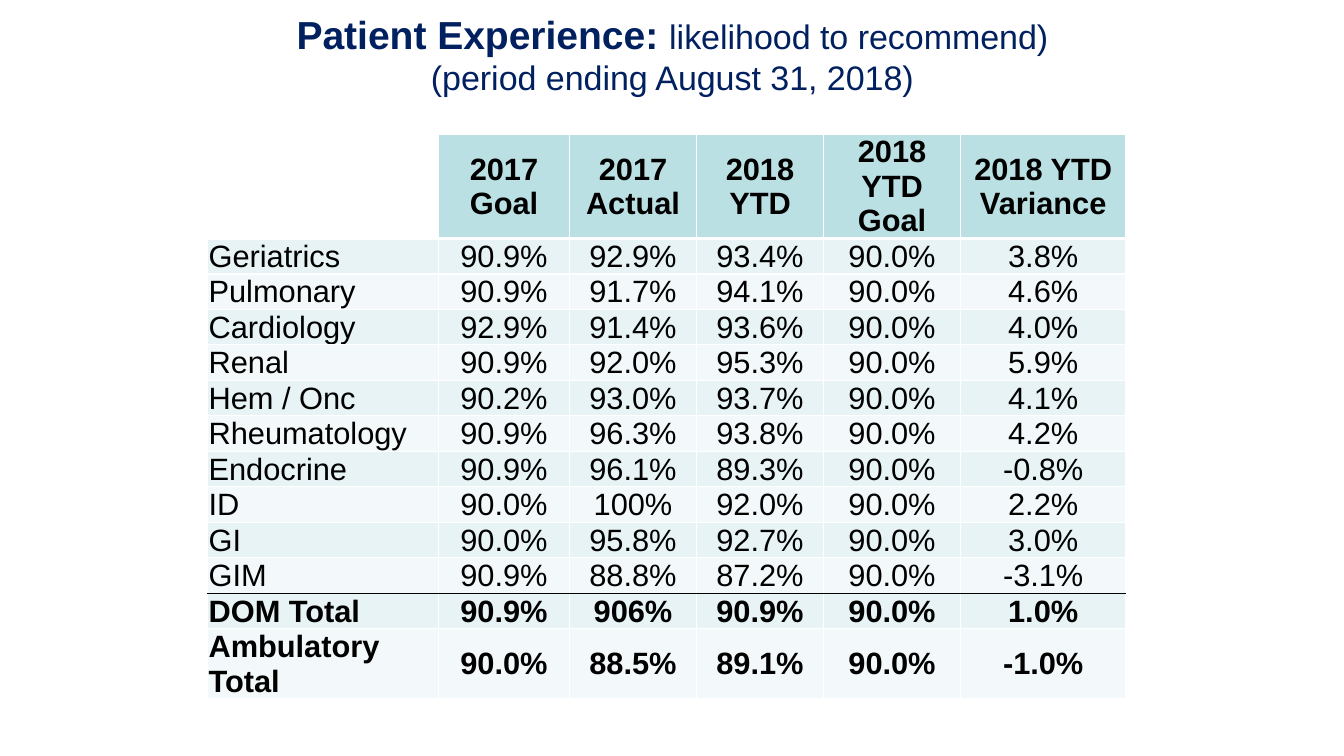
from lxml.etree import SubElement
from pptx import Presentation
from pptx.dml.color import RGBColor
from pptx.enum.text import MSO_ANCHOR, MSO_AUTO_SIZE, PP_ALIGN
from pptx.oxml.ns import qn
from pptx.util import Inches, Pt

NAVY = RGBColor(0x00, 0x20, 0x60)
BLACK = RGBColor(0x00, 0x00, 0x00)
WHITE = RGBColor(0xFF, 0xFF, 0xFF)
HEADER_TEAL = RGBColor(0xBB, 0xE0, 0xE3)
BANDS = (RGBColor(0xF3, 0xF9, 0xFA), RGBColor(0xE7, 0xF3, 0xF4))

WIDTH, HEIGHT = Inches(13.33), Inches(7.5)

# Percent of the slide's width and height
TITLE_BOX = (19.35, 3.33, 61.37, 7.6)
TABLE_BOX = (15.45, 17.73, 68.42, 79.6)
COLUMNS = (17.18, 9.75, 9.45, 9.45, 10.2, 12.3)
HEADER_ROW, BODY_ROW = 13.33, 4.13

ROWS = [
    ("", "2017 Goal", "2017 Actual", "2018 YTD", "2018 YTD Goal", "2018 YTD Variance"),
    ("Geriatrics", "90.9%", "92.9%", "93.4%", "90.0%", "3.8%"),
    ("Pulmonary", "90.9%", "91.7%", "94.1%", "90.0%", "4.6%"),
    ("Cardiology", "92.9%", "91.4%", "93.6%", "90.0%", "4.0%"),
    ("Renal", "90.9%", "92.0%", "95.3%", "90.0%", "5.9%"),
    ("Hem / Onc", "90.2%", "93.0%", "93.7%", "90.0%", "4.1%"),
    ("Rheumatology", "90.9%", "96.3%", "93.8%", "90.0%", "4.2%"),
    ("Endocrine", "90.9%", "96.1%", "89.3%", "90.0%", "-0.8%"),
    ("ID", "90.0%", "100%", "92.0%", "90.0%", "2.2%"),
    ("GI", "90.0%", "95.8%", "92.7%", "90.0%", "3.0%"),
    ("GIM", "90.9%", "88.8%", "87.2%", "90.0%", "-3.1%"),
    ("DOM Total", "90.9%", "906%", "90.9%", "90.0%", "1.0%"),
    ("Ambulatory Total", "90.0%", "88.5%", "89.1%", "90.0%", "-1.0%"),
]
FIRST_TOTAL = 11


def across(share):
    return int(WIDTH * share / 100)


def down(share):
    return int(HEIGHT * share / 100)


def place(box):
    left, top, width, height = box
    return across(left), down(top), across(width), down(height)


def set_all(obj, **values):
    for name, value in values.items():
        setattr(obj, name, value)


def add_run(p, text, size, color, bold):
    r = p.add_run()
    r.text = text
    set_all(r.font, name="Arial", size=Pt(size), bold=bold)
    r.font.color.rgb = color


def add_border(cell, side, color, points):
    ln = SubElement(cell._tc.get_or_add_tcPr(), qn(f"a:ln{side}"), w=str(Pt(points)))
    fill = SubElement(ln, qn("a:solidFill"))
    SubElement(fill, qn("a:srgbClr"), val=str(color))


def rule_at(edge):
    """Colour and width of the horizontal rule above row number `edge`."""
    if edge == 1:
        return WHITE, 3
    return (BLACK if edge == FIRST_TOTAL else WHITE), 1


def format_cell(cell, text, row, col):
    # Borders come before the fill in the cell properties
    add_border(cell, "L", WHITE, 1)
    add_border(cell, "R", WHITE, 1)
    add_border(cell, "T", *rule_at(row))
    add_border(cell, "B", *rule_at(row + 1))
    set_all(cell, vertical_anchor=MSO_ANCHOR.MIDDLE, margin_left=Inches(0.01),
            margin_right=Inches(0.01), margin_top=Inches(0.01), margin_bottom=0)
    if not text:
        cell.fill.background()
        return
    cell.fill.solid()
    cell.fill.fore_color.rgb = BANDS[row % 2] if row else HEADER_TEAL
    p = cell.text_frame.paragraphs[0]
    p.alignment = PP_ALIGN.CENTER if col else PP_ALIGN.LEFT
    add_run(p, text, 22, BLACK, row == 0 or row >= FIRST_TOTAL)


def add_title(s):
    sp = s.shapes.title
    sp.left, sp.top, sp.width, sp.height = place(TITLE_BOX)
    tf = sp.text_frame
    set_all(tf, word_wrap=True, auto_size=MSO_AUTO_SIZE.NONE,
            vertical_anchor=MSO_ANCHOR.MIDDLE)
    p = tf.paragraphs[0]
    p.alignment = PP_ALIGN.CENTER
    add_run(p, "Patient Experience: ", 27.9, NAVY, True)
    add_run(p, "likelihood to recommend) (period ending August 31, 2018)",
            24.3, NAVY, False)


def add_score_table(s):
    frame = s.shapes.add_table(len(ROWS), len(COLUMNS), *place(TABLE_BOX))
    table = frame.table
    for column, share in zip(table.columns, COLUMNS):
        column.width = across(share)
    for row, texts in enumerate(ROWS):
        table.rows[row].height = down(BODY_ROW if row else HEADER_ROW)
        for col, text in enumerate(texts):
            format_cell(table.cell(row, col), text, row, col)
    frame.height = down(TABLE_BOX[3])


def main():
    prs = Presentation()
    set_all(prs, slide_width=WIDTH, slide_height=HEIGHT)
    s = prs.slides.add_slide(prs.slide_layouts[5])
    add_title(s)
    add_score_table(s)
    prs.save("out.pptx")


if __name__ == "__main__":
    main()
